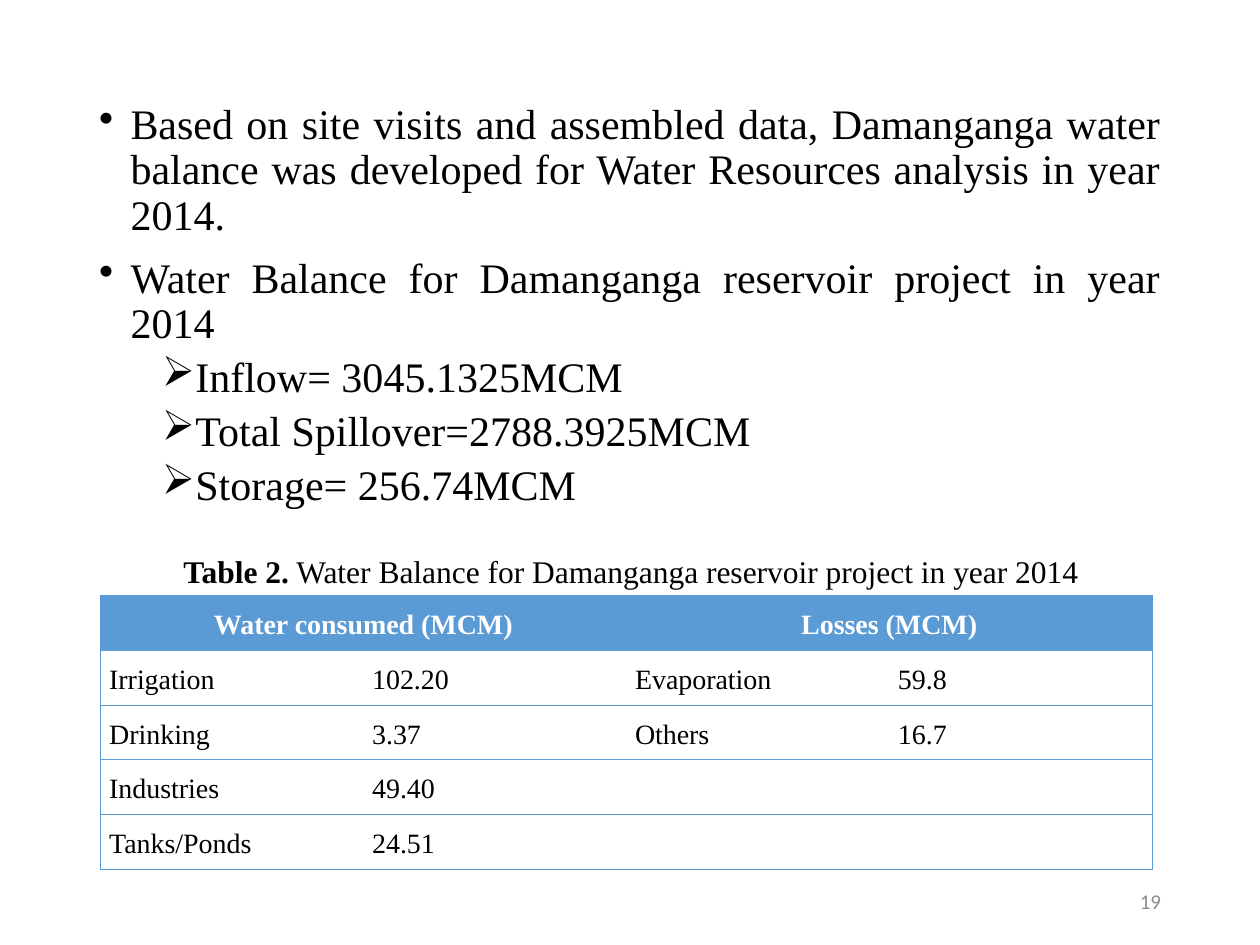
from dataclasses import dataclass

from lxml.etree import SubElement
from pptx import Presentation
from pptx.dml.color import RGBColor
from pptx.enum.text import MSO_ANCHOR, PP_ALIGN
from pptx.oxml.ns import qn
from pptx.util import Pt

COLORS = {"ink": "000000", "white": "FFFFFF", "blue": "5B9BD5", "grey": "8C8C8C"}
SERIF = "Times New Roman"
COLUMN_WIDTH, ROW_HEIGHT = 150.25, 31.25


@dataclass(frozen=True)
class Point:
    text: str
    bullet: str
    indent: float
    space_before: float


@dataclass(frozen=True)
class Box:
    left: float
    top: float
    width: float
    height: float


POINTS = [
    Point("Based on site visits and assembled data, Damanganga water balance was "
          "developed for Water Resources analysis in year 2014.", "•", 18, 10),
    Point("Water Balance for Damanganga reservoir project in year 2014", "•", 18, 10),
    Point("Inflow= 3045.1325MCM", "➢", 54, 5),
    Point("Total Spillover=2788.3925MCM", "➢", 54, 5),
    Point("Storage= 256.74MCM", "➢", 54, 5),
]
BALANCE = [
    ["Water consumed (MCM)", "", "Losses (MCM)", ""],
    ["Irrigation", "102.20", "Evaporation", "59.8"],
    ["Drinking", "3.37", "Others", "16.7"],
    ["Industries", "49.40", "", ""],
    ["Tanks/Ponds", "24.51", "", ""],
]
MERGES = [(0, 0), (0, 2), (3, 2), (4, 2)]


def write(paragraph, text: str, *, size: float, font: str = SERIF, color: str = "ink",
          bold: bool = False, align=PP_ALIGN.LEFT, spacing: float = 1.0,
          before: float = 0) -> None:
    """Append a formatted run and set the format of its paragraph."""
    paragraph.alignment = align
    paragraph.line_spacing = spacing
    paragraph.space_before = Pt(before)
    run = paragraph.add_run()
    run.text = text
    run.font.size = Pt(size)
    run.font.name = font
    run.font.bold = bold
    run.font.color.rgb = RGBColor.from_string(COLORS[color])


def add_frame(slide, box: Box, anchor=MSO_ANCHOR.TOP):
    """Add a wrapping text box and return its text frame."""
    frame = slide.shapes.add_textbox(
        Pt(box.left), Pt(box.top), Pt(box.width), Pt(box.height)).text_frame
    frame.word_wrap = True
    frame.vertical_anchor = anchor
    return frame


def add_points(slide, box: Box, points: list[Point]) -> None:
    """Write the bulleted points, justified, with hanging indents."""
    frame = add_frame(slide, box)
    for index, point in enumerate(points):
        paragraph = frame.add_paragraph() if index else frame.paragraphs[0]
        write(paragraph, point.text, size=24, align=PP_ALIGN.JUSTIFY, spacing=0.9,
              before=point.space_before)
        properties = paragraph._p.get_or_add_pPr()
        properties.set("marL", str(Pt(point.indent)))
        properties.set("indent", str(-Pt(18)))
        SubElement(properties, qn("a:buChar"), char=point.bullet)


def set_borders(cell, ruled_sides: str) -> None:
    """Rule the named sides of a cell and clear the others."""
    properties = cell._tc.get_or_add_tcPr()
    for side in "LRTB":
        border = SubElement(properties, qn(f"a:ln{side}"), w=str(Pt(0.5)))
        if side in ruled_sides:
            fill = SubElement(border, qn("a:solidFill"))
            SubElement(fill, qn("a:srgbClr"), val=COLORS["blue"])
        else:
            SubElement(border, qn("a:noFill"))


def add_balance_table(slide, left: float, top: float, rows: list[list[str]]) -> None:
    """Draw the water balance with a blue header and horizontal rules."""
    last = len(rows[0]) - 1
    table = slide.shapes.add_table(
        len(rows), last + 1, Pt(left), Pt(top),
        Pt(COLUMN_WIDTH * (last + 1)), Pt(ROW_HEIGHT * len(rows))).table
    table.first_row = table.horz_banding = False
    for column in table.columns:
        column.width = Pt(COLUMN_WIDTH)
    for row, labels in enumerate(rows):
        table.rows[row].height = Pt(ROW_HEIGHT)
        header = row == 0
        for column, label in enumerate(labels):
            cell = table.cell(row, column)
            cell.margin_left = cell.margin_right = Pt(5)
            cell.margin_top = cell.margin_bottom = Pt(0)
            cell.vertical_anchor = MSO_ANCHOR.MIDDLE
            merged = (row, column) in MERGES
            right_edge = column + merged == last
            set_borders(cell, "TB" + "L" * (column == 0) + "R" * right_edge)
            cell.fill.solid()
            cell.fill.fore_color.rgb = RGBColor.from_string(
                COLORS["blue" if header else "white"])
            if label:
                write(cell.text_frame.paragraphs[0], label, size=16, bold=header,
                      color="white" if header else "ink", spacing=1.15,
                      align=PP_ALIGN.CENTER if header else PP_ALIGN.LEFT)
    for row, column in MERGES:
        table.cell(row, column).merge(table.cell(row, column + 1))


def main() -> None:
    """Build the water balance slide."""
    deck = Presentation()
    deck.slide_width, deck.slide_height = Pt(720), Pt(540)
    slide = deck.slides.add_slide(deck.slide_layouts[6])
    add_points(slide, Box(49.5, 55.5, 620.75, 342.5), POINTS)
    add_balance_table(slide, 57.4, 340.4, BALANCE)
    page = add_frame(slide, Box(508.5, 500.5, 162, 28.75), MSO_ANCHOR.MIDDLE)
    write(page.paragraphs[0], "19", size=12, font="Calibri", color="grey",
          align=PP_ALIGN.RIGHT)
    caption = add_frame(slide, Box(55.25, 312, 611, 29)).paragraphs[0]
    write(caption, "Table 2.", size=18, bold=True, align=PP_ALIGN.CENTER)
    write(caption, " Water Balance for Damanganga reservoir project in year 2014",
          size=18, align=PP_ALIGN.CENTER)
    deck.save("out.pptx")


if __name__ == "__main__":
    main()
